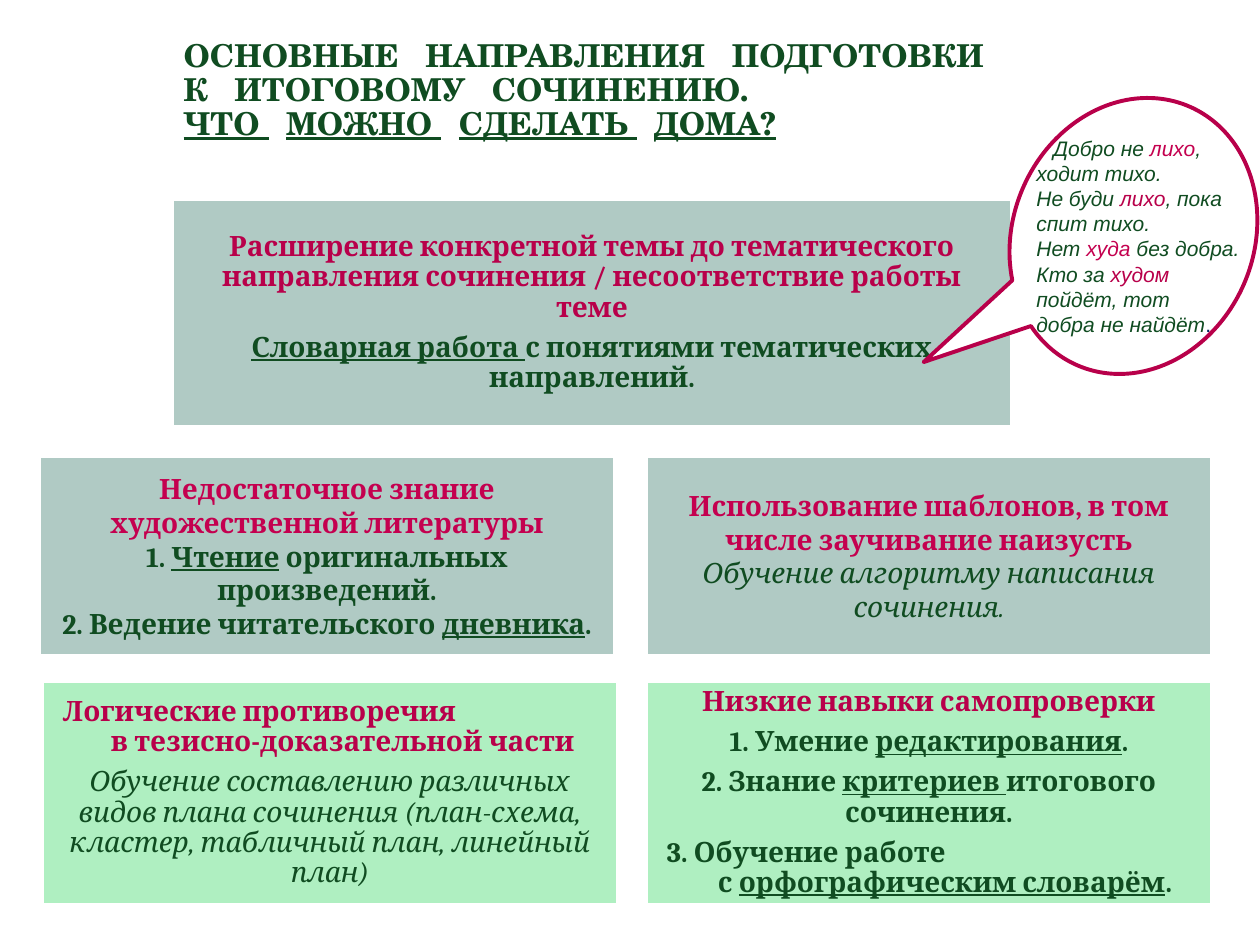
"""Build a slide on the main ways to prepare for the final essay."""
from dataclasses import dataclass
from typing import Optional

import pptx
import pptx.dml.color
import pptx.enum.shapes
import pptx.enum.text
import pptx.util

PX = 914400 / 126
COLORS = {
    "green": "104C21",
    "crimson": "B8004A",
    "raspberry": "C4004F",
    "navy": "002060",
    "sage": "B0CAC4",
    "mint": "AFEFC1",
    "white": "FFFFFF",
}
ALIGN = pptx.enum.text.PP_ALIGN
SHAPE = pptx.enum.shapes.MSO_SHAPE


@dataclass(frozen=True)
class Span:
    text: str
    color: Optional[str] = None
    underline: Optional[bool] = None
    italic: Optional[bool] = None
    tracking: int = 0


@dataclass(frozen=True)
class Para:
    spans: tuple[Span, ...]
    color: str = "green"
    bold: bool = True
    italic: bool = False
    underline: bool = False
    centered: bool = True
    margin: int = 0
    indent: int = 0


@dataclass(frozen=True)
class TextStyle:
    font: str
    size: int
    line_spacing: float = 1.0
    space_after: float = 0


@dataclass(frozen=True)
class Panel:
    place: tuple[int, int, int, int]
    fill: str
    inset: int
    style: TextStyle
    paras: tuple[Para, ...]


TITLE = TextStyle("TeX Gyre Schola", 18, 0.9)
SPACED = TextStyle("Cambria", 16, 0.9, 5.6)
PLAIN = TextStyle("Cambria", 16)
VERSE = TextStyle("Arial", 12)


def px(value: int) -> int:
    return round(value * PX)


def rgb(name: str) -> pptx.dml.color.RGBColor:
    return pptx.dml.color.RGBColor.from_string(COLORS[name])


def title_para(text: str, underline: bool = False) -> Para:
    words = text.split()
    spans = [Span(words[0])]
    for word in words[1:]:
        spans += [Span(" ", tracking=1000), Span(word)]
    return Para(tuple(spans), underline=underline, centered=False, margin=24)


def verse_para(*spans: Span, indent: int = 0) -> Para:
    return Para(spans, bold=False, italic=True, centered=False, indent=indent)


def add_span(paragraph, span: Span) -> None:
    for index, piece in enumerate(span.text.split("\n")):
        if index:
            paragraph.add_line_break()
        run = paragraph.add_run()
        run.text = piece
        if span.color:
            run.font.color.rgb = rgb(span.color)
        if span.underline is not None:
            run.font.underline = span.underline
        if span.italic is not None:
            run.font.italic = span.italic
        if span.tracking:
            run._r.get_or_add_rPr().set("spc", str(span.tracking))


def write(frame, paras: tuple[Para, ...], style: TextStyle) -> None:
    frame.word_wrap = True
    for index, para in enumerate(paras):
        paragraph = frame.add_paragraph() if index else frame.paragraphs[0]
        paragraph.alignment = ALIGN.CENTER if para.centered else ALIGN.LEFT
        paragraph.line_spacing = style.line_spacing
        paragraph.space_before = pptx.util.Pt(0)
        last = index == len(paras) - 1
        paragraph.space_after = pptx.util.Pt(0 if last else style.space_after)
        properties = paragraph._p.get_or_add_pPr()
        properties.set("marL", str(px(para.margin)))
        properties.set("indent", str(px(para.indent)))
        font = paragraph.font
        font.name, font.size = style.font, pptx.util.Pt(style.size)
        font.bold, font.italic = para.bold, para.italic
        font.underline = para.underline
        font.color.rgb = rgb(para.color)
        for span in para.spans:
            add_span(paragraph, span)


def add_filled(page, kind, place: tuple[int, int, int, int], fill: str, line: str, width: float):
    shape = page.shapes.add_shape(kind, *map(px, place))
    shape.shadow.inherit = False
    shape.fill.solid()
    shape.fill.fore_color.rgb = rgb(fill)
    shape.line.color.rgb = rgb(line)
    shape.line.width = pptx.util.Pt(width)
    return shape


def add_panel(page, panel: Panel) -> None:
    box = add_filled(page, SHAPE.RECTANGLE, panel.place, panel.fill, "white", 4.5)
    frame = box.text_frame
    frame.vertical_anchor = pptx.enum.text.MSO_ANCHOR.MIDDLE
    frame.margin_left = frame.margin_right = px(panel.inset)
    frame.margin_top = frame.margin_bottom = px(panel.inset)
    write(frame, panel.paras, panel.style)


def add_title(page) -> None:
    title = page.shapes.title
    title.left, title.top, title.width, title.height = map(px, (147, 42, 949, 98))
    title.text_frame.auto_size = pptx.enum.text.MSO_AUTO_SIZE.NONE
    title.text_frame.vertical_anchor = pptx.enum.text.MSO_ANCHOR.MIDDLE
    lines = (
        title_para("ОСНОВНЫЕ НАПРАВЛЕНИЯ ПОДГОТОВКИ"),
        title_para("К ИТОГОВОМУ СОЧИНЕНИЮ."),
        title_para("ЧТО МОЖНО СДЕЛАТЬ ДОМА?", underline=True),
    )
    write(title.text_frame, lines, TITLE)


def add_callout(page) -> None:
    bubble = add_filled(page, SHAPE.OVAL_CALLOUT, (1013, 95, 241, 282), "white", "crimson", 2.25)
    bubble.rotation = 23.3
    bubble.adjustments[0], bubble.adjustments[1] = -0.593, 0.705
    box = page.shapes.add_textbox(*map(px, (1024, 129, 231, 255)))
    verses = (
        verse_para(Span("Добро не "), Span("лихо", "raspberry"), Span(", ходит тихо."), indent=17),
        verse_para(Span("Не буди "), Span("лихо", "crimson"), Span(", пока спит тихо.")),
        verse_para(Span("Нет "), Span("худа", "raspberry"), Span(" без добра.")),
        verse_para(Span("Кто за "), Span("худом ", "crimson"),
                   Span("пойдёт, тот\nдобра не найдёт"), Span(".", "navy", italic=False)),
    )
    write(box.text_frame, verses, VERSE)


PANELS = (
    Panel((170, 197, 844, 232), "sage", 23, SPACED, (
        Para((Span("Расширение конкретной темы до тематического направления сочинения"
                   " / несоответствие работы теме"),), "crimson"),
        Para((Span("Словарная работа ", underline=True), Span("с понятиями тематических направлений."))),
    )),
    Panel((644, 454, 570, 204), "sage", 21, PLAIN, (
        Para((Span("Использование шаблонов, в том числе заучивание наизусть"),), "raspberry"),
        Para((Span("Обучение алгоритму написания сочинения."),), bold=False, italic=True),
    )),
    Panel((644, 679, 570, 228), "mint", 23, SPACED, (
        Para((Span("Низкие навыки самопроверки"),), "crimson"),
        Para((Span("1. Умение "), Span("редактирования", underline=True), Span("."))),
        Para((Span("2. Знание "), Span("критериев ", underline=True), Span("итогового сочинения."))),
        Para((Span("3. Обучение работе\nс "), Span("орфографическим словарём", underline=True), Span(".")),
             centered=False, margin=51, indent=-51),
    )),
    Panel((40, 679, 580, 228), "mint", 23, SPACED, (
        Para((Span("Логические противоречия\nв тезисно-доказательной части"),), "crimson",
             centered=False, margin=48, indent=-48),
        Para((Span("Обучение составлению различных видов плана сочинения"
                   " (план-схема, кластер, табличный план, линейный план)"),), bold=False, italic=True),
    )),
    Panel((37, 454, 580, 204), "sage", 21, PLAIN, (
        Para((Span("Недостаточное знание художественной литературы"),), "raspberry"),
        Para((Span("1. "), Span("Чтение", underline=True), Span(" оригинальных произведений."))),
        Para((Span("2. Ведение читательского "), Span("дневника", underline=True), Span("."))),
    )),
)


def main() -> None:
    deck = pptx.Presentation()
    deck.slide_width, deck.slide_height = px(1260), px(945)
    page = deck.slides.add_slide(deck.slide_layouts[5])
    add_title(page)
    for panel in PANELS:
        add_panel(page, panel)
    add_callout(page)
    deck.save("out.pptx")


if __name__ == "__main__":
    main()
